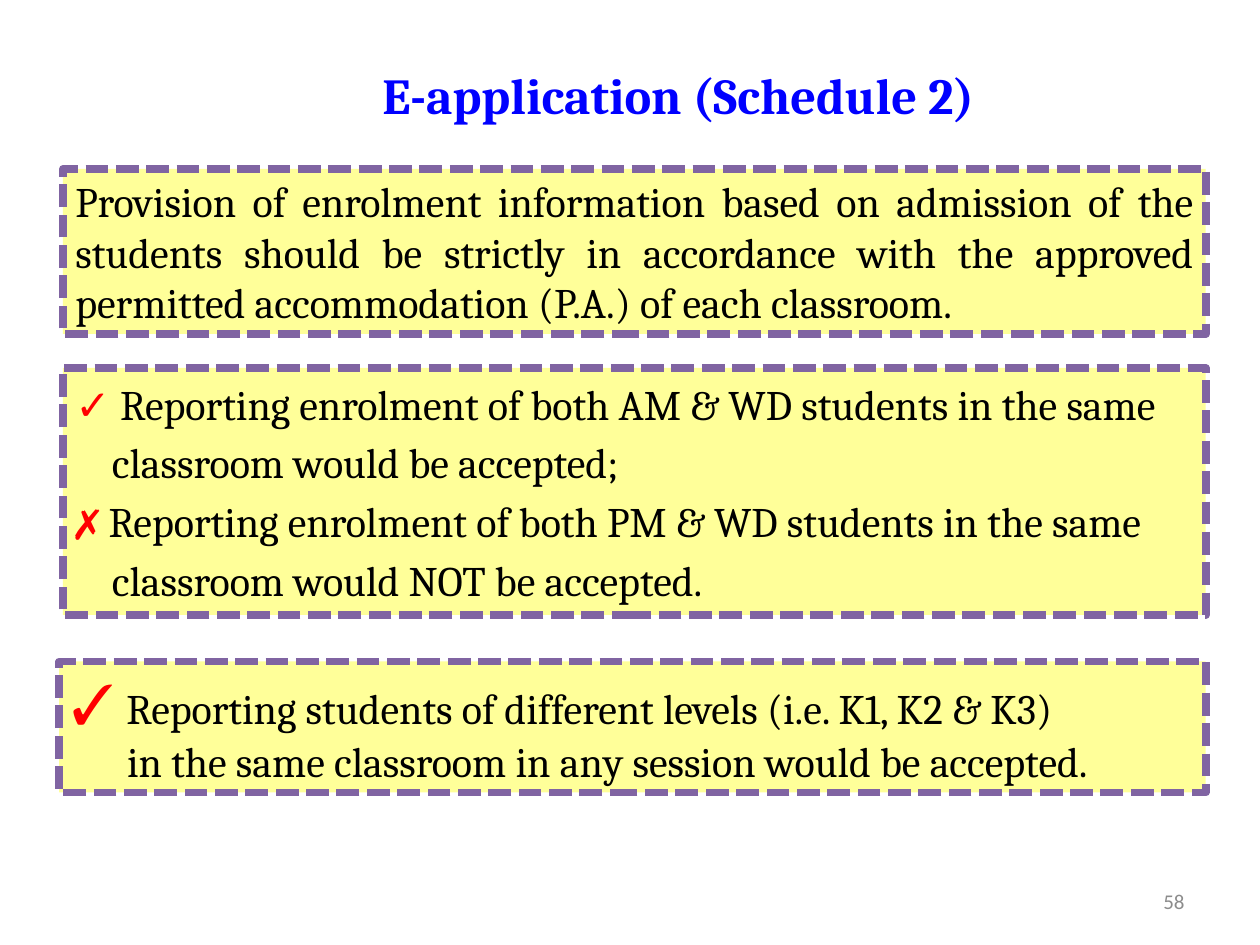
"""Build the E-application (Schedule 2) slide on enrolment reporting rules."""
from pptx import Presentation
from pptx.dml.color import RGBColor
from pptx.enum.dml import MSO_LINE
from pptx.enum.shapes import MSO_SHAPE
from pptx.enum.text import MSO_ANCHOR, PP_ALIGN
from pptx.util import Inches, Pt

BLACK, RED, BLUE, GREY = "000000", "FF0000", "0000FF", "8C8C8C"
YELLOW, PURPLE = "FFFF99", "8064A2"


def color(hex_string):
    return RGBColor.from_string(hex_string)


def write(shape, lines, align, space_before=0):
    """Fill a shape with lines, each a left indent and its (text, size, font, colour) runs."""
    frame = shape.text_frame
    frame.word_wrap = True
    frame.vertical_anchor = MSO_ANCHOR.MIDDLE
    for number, (indent, runs) in enumerate(lines):
        paragraph = frame.paragraphs[0] if number == 0 else frame.add_paragraph()
        paragraph.alignment = align
        if number:
            paragraph.space_before = Pt(space_before)
        paragraph._p.get_or_add_pPr().set("marL", str(Inches(indent)))
        for text, size, font, hex_string in runs:
            run = paragraph.add_run()
            run.text = text
            run.font.size = Pt(size)
            run.font.name = font
            run.font.color.rgb = color(hex_string)


presentation = Presentation()
presentation.slide_width, presentation.slide_height = Inches(10), Inches(7.5)
slide = presentation.slides.add_slide(presentation.slide_layouts[6])

title = slide.shapes.add_textbox(Inches(1.3), Inches(0.44), Inches(8.17), Inches(0.61))
write(title, [(0, [("E-application (Schedule 2)", 28.8, "Cambria", BLUE)])], PP_ALIGN.CENTER)
title.text_frame.paragraphs[0].runs[0].font.bold = True

provision = [
    (0, [("Provision of enrolment information based on admission of the students should be "
          "strictly in accordance with the approved permitted accommodation (P.A.) of each "
          "classroom.", 24, "Cambria", BLACK)]),
]
sessions = [
    (0, [("✓ ", 24, "Calibri", RED),
         ("Reporting enrolment of both AM & WD students in the same", 24, "Cambria", BLACK)]),
    (0.29, [("classroom would be accepted;", 24, "Cambria", BLACK)]),
    (0, [("✗ ", 24, "Cambria", RED),
         ("Reporting enrolment of both PM & WD students in the same", 24, "Cambria", BLACK)]),
    (0.29, [("classroom would NOT be accepted.", 24, "Cambria", BLACK)]),
]
levels = [
    (0, [("✓ ", 32, "Cambria", RED),
         ("Reporting students of different levels (i.e. K1, K2 & K3)", 24, "Cambria", BLACK)]),
    (0.44, [("in the same classroom in any session would be accepted.", 24, "Cambria", BLACK)]),
]

for left, top, width, height, lines, align, space_before in [
    (0.5, 1.34, 9.07, 1.31, provision, PP_ALIGN.JUSTIFY, 0),
    (0.5, 2.92, 9.07, 1.96, sessions, PP_ALIGN.JUSTIFY, 4.8),
    (0.47, 5.25, 9.1, 1.04, levels, PP_ALIGN.LEFT, 0),
]:
    rule = slide.shapes.add_shape(
        MSO_SHAPE.RECTANGLE, Inches(left), Inches(top), Inches(width), Inches(height))
    rule.shadow.inherit = False
    rule.fill.solid()
    rule.fill.fore_color.rgb = color(YELLOW)
    rule.line.color.rgb = color(PURPLE)
    rule.line.width = Pt(4.33)
    rule.line.dash_style = MSO_LINE.SQUARE_DOT
    write(rule, lines, align, space_before)

page_number = slide.shapes.add_textbox(Inches(7.17), Inches(6.95), Inches(2.33), Inches(0.4))
write(page_number, [(0, [("58", 12, "Calibri", GREY)])], PP_ALIGN.RIGHT)

presentation.save("out.pptx")
